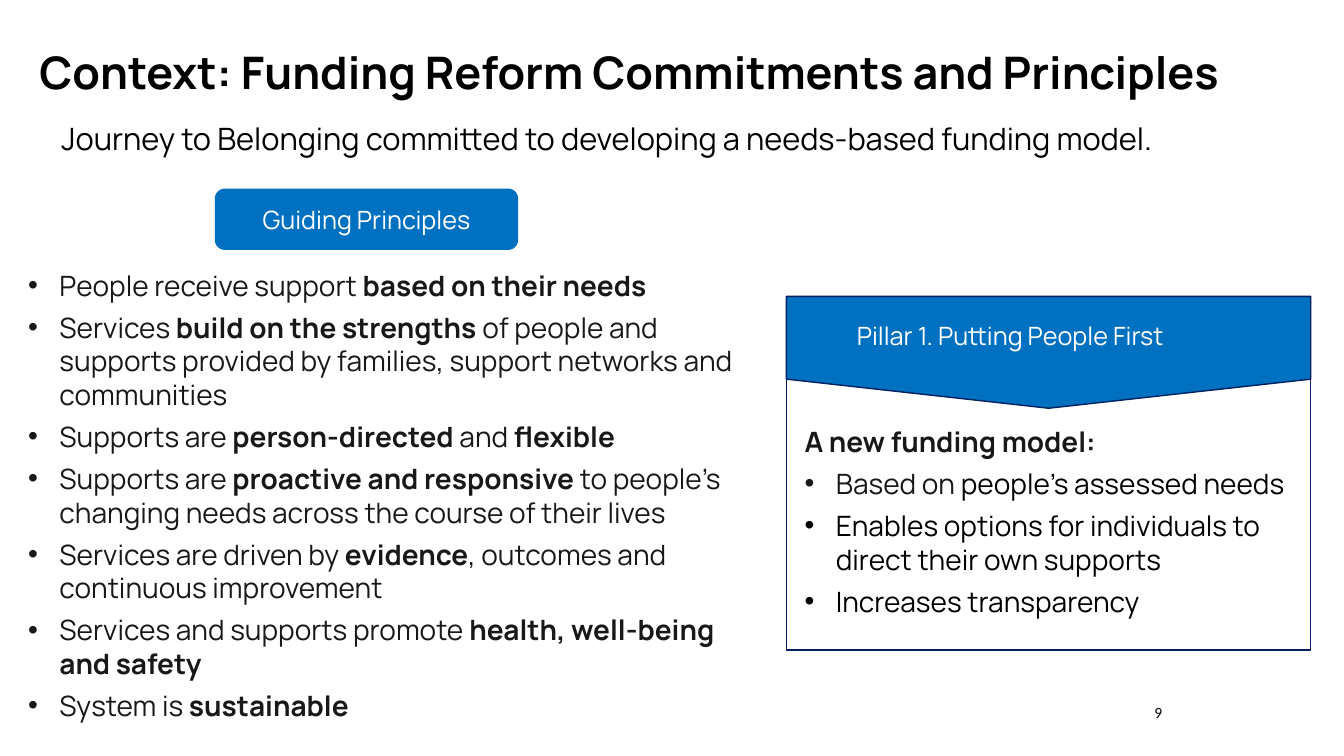
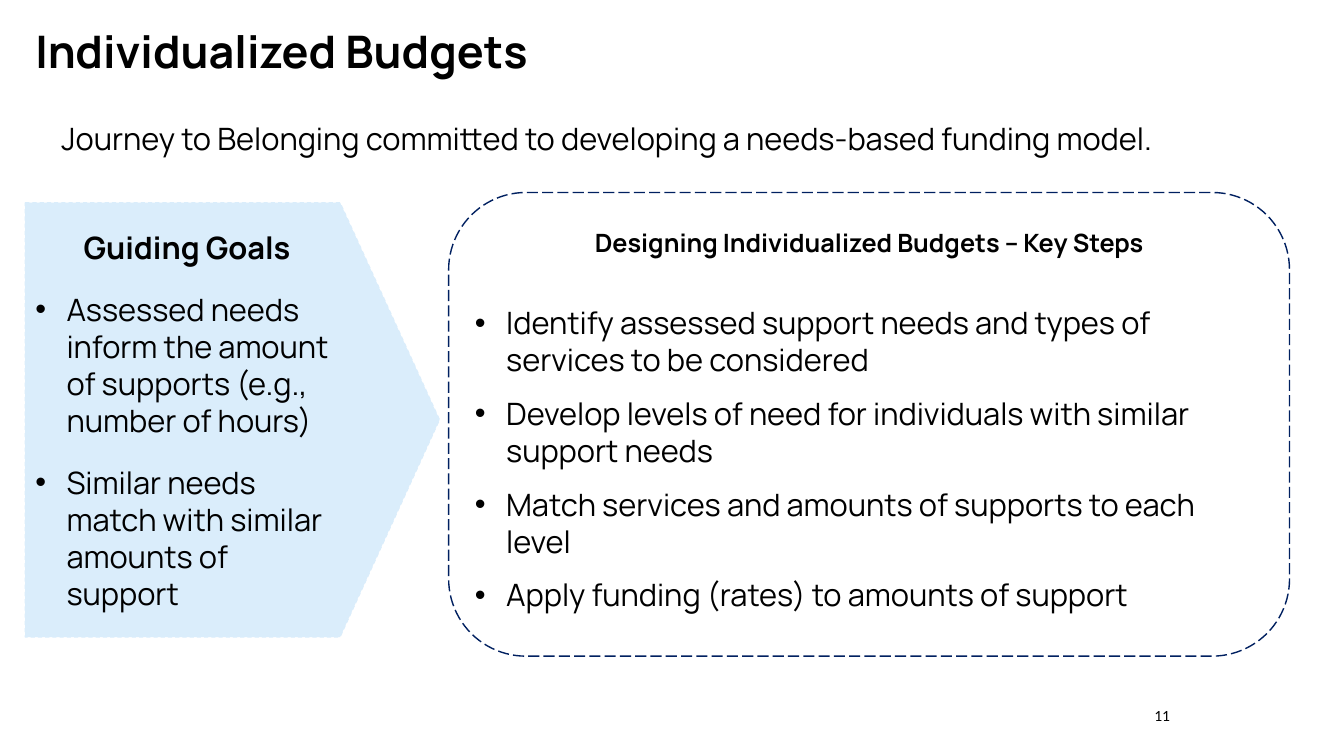
from pptx import Presentation
from pptx.dml.color import RGBColor
from pptx.enum.dml import MSO_LINE
from pptx.enum.shapes import MSO_SHAPE
from pptx.enum.text import MSO_ANCHOR, MSO_AUTO_SIZE, PP_ALIGN
from pptx.oxml.xmlchemy import OxmlElement
from pptx.util import Inches, Pt

COLORS = {
    "white": "FFFFFF",
    "black": "000000",
    "charcoal": "181818",
    "blue": "0070C0",
    "navy": "002060",
    "sky": "DAEDFB",
}
TITLE = {"name": "Manrope", "size": Pt(32), "bold": True, "color": "black"}
LEAD = {"name": "Manrope", "size": Pt(22), "bold": False, "color": "black"}
DETAIL = {**LEAD, "size": Pt(20), "color": "charcoal"}
LABEL = {**LEAD, "size": Pt(18), "color": "white"}
NUMBER = {"name": "Calibri", "size": Pt(11.1), "color": "black"}
BOLD = {"bold": True}
BLACK = {"color": "black"}

COMMITMENT = "Journey to Belonging committed to developing a needs-based funding model."
PRINCIPLES = [
    ["People receive support ", ("based on their needs", BOLD)],
    ["Services ", ("build on the strengths ", BOLD),
     "of people and supports provided by families, support networks and communities"],
    ["Supports are ", ("person-directed", BOLD), " and ", ("flexible", BOLD)],
    ["Supports are ", ("proactive and responsive ", BOLD),
     "to people’s changing needs across the course of their lives"],
    ["Services are driven by ", ("evidence", BOLD), ", outcomes and continuous improvement"],
    ["Services and supports promote ", ("health, well-being and safety", BOLD)],
    ["System is ", ("sustainable", BOLD)],
]
FUNDING_MODEL = [
    ["Based on ", ("people’s assessed needs", BLACK)],
    [("Enables options for individuals to direct their own supports", BLACK)],
    [("Increases transparency", BLACK)],
]
GOALS = [
    ["Assessed needs inform the amount of supports (e.g., number of hours)"],
    ["Similar needs match with similar amounts of support"],
]
KEY_STEPS = [
    ["Identify assessed support needs and types of services to be considered"],
    ["Develop levels of need for individuals with similar support needs"],
    ["Match services and amounts of supports to each level"],
    ["Apply funding (rates) to amounts of support"],
]


def rgb(color):
    return RGBColor.from_string(COLORS[color])


def style_font(font, style):
    for key, value in style.items():
        if key == "color":
            font.color.rgb = rgb(value)
        else:
            setattr(font, key, value)


def set_bullet(paragraph, bulleted):
    properties = paragraph._p.get_or_add_pPr()
    indent = Inches(0.31) if bulleted else 0
    properties.set("marL", str(indent))
    properties.set("indent", str(-indent))
    if bulleted:
        face = OxmlElement("a:buFont")
        face.set("typeface", "Arial")
        mark = OxmlElement("a:buChar")
        mark.set("char", "•")
        properties.extend([face, mark])
    else:
        properties.append(OxmlElement("a:buNone"))


def write_paragraph(paragraph, parts, style, bulleted=False, **layout):
    spacing = {"alignment": PP_ALIGN.LEFT, "space_before": Pt(0), "space_after": Pt(0)}
    for key, value in {**spacing, **layout}.items():
        setattr(paragraph, key, value)
    set_bullet(paragraph, bulleted)
    for part in parts:
        text, emphasis = (part, {}) if isinstance(part, str) else part
        run = paragraph.add_run()
        run.text = text
        style_font(run.font, {**style, **emphasis})


def prepare_frame(shape, **options):
    frame = shape.text_frame
    defaults = {"word_wrap": True, "auto_size": MSO_AUTO_SIZE.NONE,
                "vertical_anchor": MSO_ANCHOR.TOP,
                "margin_left": Inches(0.1), "margin_right": Inches(0.1),
                "margin_top": Inches(0.05), "margin_bottom": Inches(0.05)}
    for key, value in {**defaults, **options}.items():
        setattr(frame, key, value)
    return frame


def place(shape, box):
    for key, length in zip(("left", "top", "width", "height"), box):
        setattr(shape, key, Inches(length))


def add_panel(slide, kind, box, fill=None, line=None, weight=1, dash=None):
    panel = slide.shapes.add_shape(kind, *map(Inches, box))
    panel.shadow.inherit = False
    if fill:
        panel.fill.solid()
        panel.fill.fore_color.rgb = rgb(fill)
    else:
        panel.fill.background()
    if line:
        panel.line.color.rgb = rgb(line)
        panel.line.width = Pt(weight)
        if dash:
            panel.line.dash_style = dash
    else:
        panel.line.fill.background()
    return panel


def add_text(slide, box, text, style, **layout):
    caption = slide.shapes.add_textbox(*map(Inches, box))
    write_paragraph(prepare_frame(caption).paragraphs[0], [text], style, **layout)


def fill_list(slide, index, box, items, style, gap, before=0, heading=None, heading_style=None,
              heading_layout=None, **options):
    body = slide.placeholders[index]
    slide.shapes._spTree.append(body._element)
    place(body, box)
    frame = prepare_frame(body, **options)
    spacing = {"space_before": Pt(before), "space_after": Pt(gap)}
    paragraph = frame.paragraphs[0]
    if heading:
        write_paragraph(paragraph, [heading], heading_style, **{**spacing, **(heading_layout or {})})
        paragraph = frame.add_paragraph()
    for position, item in enumerate(items):
        if position:
            paragraph = frame.add_paragraph()
        write_paragraph(paragraph, item, style, bulleted=True, **spacing)


def start_slide(deck, title, title_box, number, number_top):
    slide = deck.slides.add_slide(deck.slide_layouts[3])
    place(slide.shapes.title, title_box)
    write_paragraph(prepare_frame(slide.shapes.title).paragraphs[0], [title], TITLE, line_spacing=0.9)
    add_text(slide, (0.51, 1.18, 12.48, 0.4), COMMITMENT, LEAD, line_spacing=0.9)
    page = add_panel(slide, MSO_SHAPE.RECTANGLE, (11.35, number_top, 1.63, 0.54), "white")
    frame = prepare_frame(page, vertical_anchor=MSO_ANCHOR.MIDDLE)
    write_paragraph(frame.paragraphs[0], [number], NUMBER)
    return slide


def add_principles(slide, box):
    left, top, width, height = box
    badge = add_panel(slide, MSO_SHAPE.ROUNDED_RECTANGLE, (left + 1.95, top, 3.01, 0.61), "blue")
    frame = prepare_frame(badge, vertical_anchor=MSO_ANCHOR.MIDDLE)
    write_paragraph(frame.paragraphs[0], ["Guiding Principles"], LABEL, alignment=PP_ALIGN.CENTER)
    fill_list(slide, 1, (left, top + 0.74, width, height - 0.74), PRINCIPLES, DETAIL, 6)


def add_pillar(slide, box):
    left, top, width, height = box
    depth = 1.11
    shift = (width - depth) / 2
    banner = add_panel(slide, MSO_SHAPE.PENTAGON, (left + shift, top - shift, depth, width),
                       "blue", "navy")
    banner.rotation = 90
    banner.adjustments[0] = 0.26
    add_text(slide, (left + 0.6, top + 0.19, width - 0.71, 0.48), "Pillar 1. Putting People First", LABEL)
    add_panel(slide, MSO_SHAPE.RECTANGLE, box, line="navy")
    fill_list(slide, 2, (left + 0.08, top + 1.22, width - 0.09, height - 1.22), FUNDING_MODEL,
              DETAIL, 6, heading="A new funding model:", heading_style={**DETAIL, **BOLD})


def add_goals(slide, box):
    left, top, width, height = box
    arrow = add_panel(slide, MSO_SHAPE.PENTAGON, box, "sky", "sky", 0.75, MSO_LINE.DASH)
    arrow.adjustments[0] = 0.24
    fill_list(slide, 1, (left, top, width - 0.5, height), GOALS, LEAD, 12, before=6,
              heading="Guiding Goals", heading_style={**LEAD, **BOLD},
              heading_layout={"alignment": PP_ALIGN.CENTER},
              vertical_anchor=MSO_ANCHOR.MIDDLE, margin_right=Inches(0.5))


def add_key_steps(slide, box):
    left, top, width, height = box
    add_panel(slide, MSO_SHAPE.ROUNDED_RECTANGLE, box, line="navy", dash=MSO_LINE.LONG_DASH)
    fill_list(slide, 2, (left + 0.22, top + 0.29, width - 0.44, height - 0.4), KEY_STEPS, LEAD, 12,
              heading="Designing Individualized Budgets – Key Steps",
              heading_style={**LABEL, **BOLD, **BLACK},
              heading_layout={"alignment": PP_ALIGN.CENTER, "space_after": Pt(33.6)},
              margin_left=Inches(0.04), margin_right=Inches(0.04))


def main():
    deck = Presentation()
    deck.slide_width, deck.slide_height = Inches(13.33), Inches(7.5)

    context = start_slide(deck, "Context: Funding Reform Commitments and Principles",
                          (0.29, 0.45, 12.33, 0.61), "9", 6.8)
    add_pillar(context, (7.8, 2.94, 5.2, 3.51))
    add_principles(context, (0.18, 1.87, 7.31, 5.38))

    budgets = start_slide(deck, "Individualized Budgets", (0.25, 0.25, 12.33, 0.95), "11", 6.83)
    add_goals(budgets, (0.25, 2.01, 4.11, 4.31))
    add_key_steps(budgets, (4.45, 1.91, 8.34, 4.6))

    deck.save("out.pptx")


if __name__ == "__main__":
    main()
